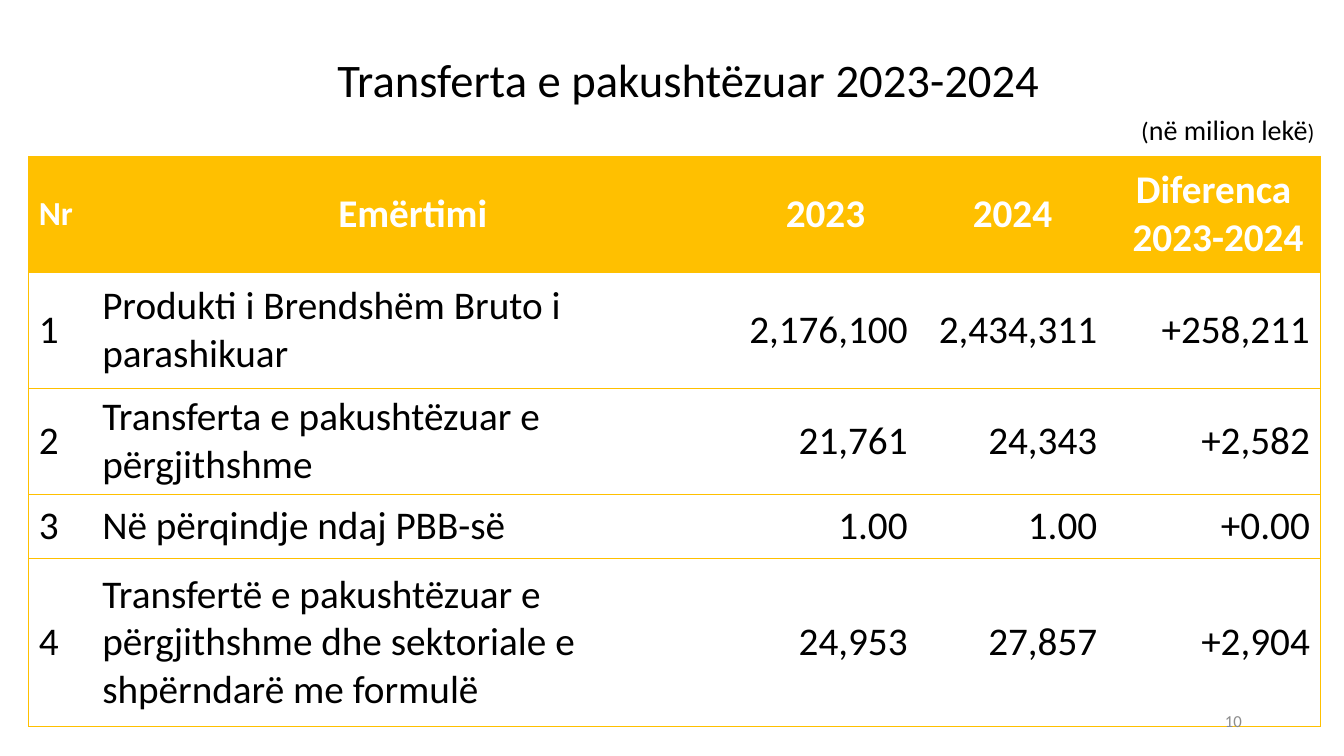
import pptx
import pptx.dml.color
import pptx.enum.text
import pptx.oxml
import pptx.oxml.ns
import pptx.util

Pt = pptx.util.Pt
ALIGN = pptx.enum.text.PP_ALIGN
MIDDLE = pptx.enum.text.MSO_ANCHOR.MIDDLE
GOLD, WHITE, BLACK, GREY = "FFC000", "FFFFFF", "000000", "8C8C8C"

COLUMN_WIDTHS = [45.4, 457.9, 131.8, 135.4, 151.9]
ROW_HEIGHTS = [82.8, 82.8, 75.6, 46.1, 120.2]
HEADER = ["Nr", "Emërtimi", "2023", "2024", "Diferenca\n 2023-2024"]
ROWS = [
    ["1", "Produkti i Brendshëm Bruto i parashikuar",
     "2,176,100", "2,434,311", "+258,211"],
    ["2", "Transferta e pakushtëzuar e përgjithshme",
     "21,761", "24,343", "+2,582"],
    ["3", "Në përqindje ndaj PBB-së", "1.00", "1.00", "+0.00"],
    ["4", "Transfertë e pakushtëzuar e përgjithshme dhe sektoriale e "
     "shpërndarë me formulë", "24,953", "27,857", "+2,904"],
]


def rgb(color):
    return pptx.dml.color.RGBColor.from_string(color)


def add_run(p, text, size=28, color=BLACK, bold=False):
    r = p.add_run()
    r.text = text
    r.font.name = "Calibri"
    r.font.size = Pt(size)
    r.font.bold = bold
    r.font.color.rgb = rgb(color)


def write(tf, text, align=ALIGN.LEFT, **style):
    for i, line in enumerate(text.split("\n")):
        p = tf.paragraphs[0] if i == 0 else tf.add_paragraph()
        p.alignment = align
        add_run(p, line, **style)


def add_title(s, text, left, top, width, height):
    sp = s.shapes.title
    sp.left, sp.top, sp.width, sp.height = map(Pt, (left, top, width, height))
    sp.text_frame.vertical_anchor = MIDDLE
    write(sp.text_frame, text, align=ALIGN.CENTER, size=33.3)


def add_text_box(s, left, top, width, height):
    tf = s.shapes.add_textbox(Pt(left), Pt(top), Pt(width), Pt(height)).text_frame
    tf.word_wrap = True
    tf.vertical_anchor = MIDDLE
    return tf


def add_unit_note(s):
    p = add_text_box(s, 800.6, 79.2, 145.4, 29.5).paragraphs[0]
    p.alignment = ALIGN.RIGHT
    p.line_spacing = 0.9
    for text, size in (("(", 18), ("në milion lekë", 20), (")", 16)):
        add_run(p, text, size=size)


def set_borders(cell, **colors):
    tcPr = cell._tc.get_or_add_tcPr()
    for side in "LRTB":
        color = colors.get(side)
        paint = (f'<a:solidFill><a:srgbClr val="{color}"/></a:solidFill>'
                 if color else "<a:noFill/>")
        tcPr.append(pptx.oxml.parse_xml(
            f'<a:ln{side} {pptx.oxml.ns.nsdecls("a")} w="{Pt(0.5)}">'
            f'{paint}</a:ln{side}>'))


def fill_cell(cell, text, row, col):
    last = len(COLUMN_WIDTHS) - 1
    set_borders(cell, T=GOLD, B=GOLD, L=GOLD if col == 0 else None,
                R=GOLD if col == last else None)
    cell.vertical_anchor = MIDDLE
    cell.fill.solid()
    cell.fill.fore_color.rgb = rgb(WHITE if row else GOLD)
    if row:
        align = ALIGN.RIGHT if col > 1 else ALIGN.LEFT
        write(cell.text_frame, text, align=align)
    else:
        write(cell.text_frame, text, align=ALIGN.CENTER if col else ALIGN.LEFT,
              size=28 if col else 24, color=WHITE, bold=True)


def add_transfer_table(s):
    table = s.shapes.add_table(
        len(ROW_HEIGHTS), len(COLUMN_WIDTHS), Pt(20.5), Pt(111.6),
        Pt(sum(COLUMN_WIDTHS)), Pt(sum(ROW_HEIGHTS))).table
    table.horz_banding = False
    for column, width in zip(table.columns, COLUMN_WIDTHS):
        column.width = Pt(width)
    for row, height in zip(table.rows, ROW_HEIGHTS):
        row.height = Pt(height)
    for i, values in enumerate([HEADER] + ROWS):
        for j, text in enumerate(values):
            fill_cell(table.cell(i, j), text, i, j)


def main():
    prs = pptx.Presentation()
    prs.slide_width, prs.slide_height = Pt(960), Pt(540)
    s = prs.slides.add_slide(prs.slide_layouts[5])
    add_title(s, "Transferta e pakushtëzuar 2023-2024", 59.8, 33.8, 864, 45.4)
    add_unit_note(s)
    add_transfer_table(s)
    write(add_text_box(s, 678.2, 500.4, 216, 28.8), "10",
          align=ALIGN.RIGHT, size=12, color=GREY)
    prs.save("out.pptx")


if __name__ == "__main__":
    main()
